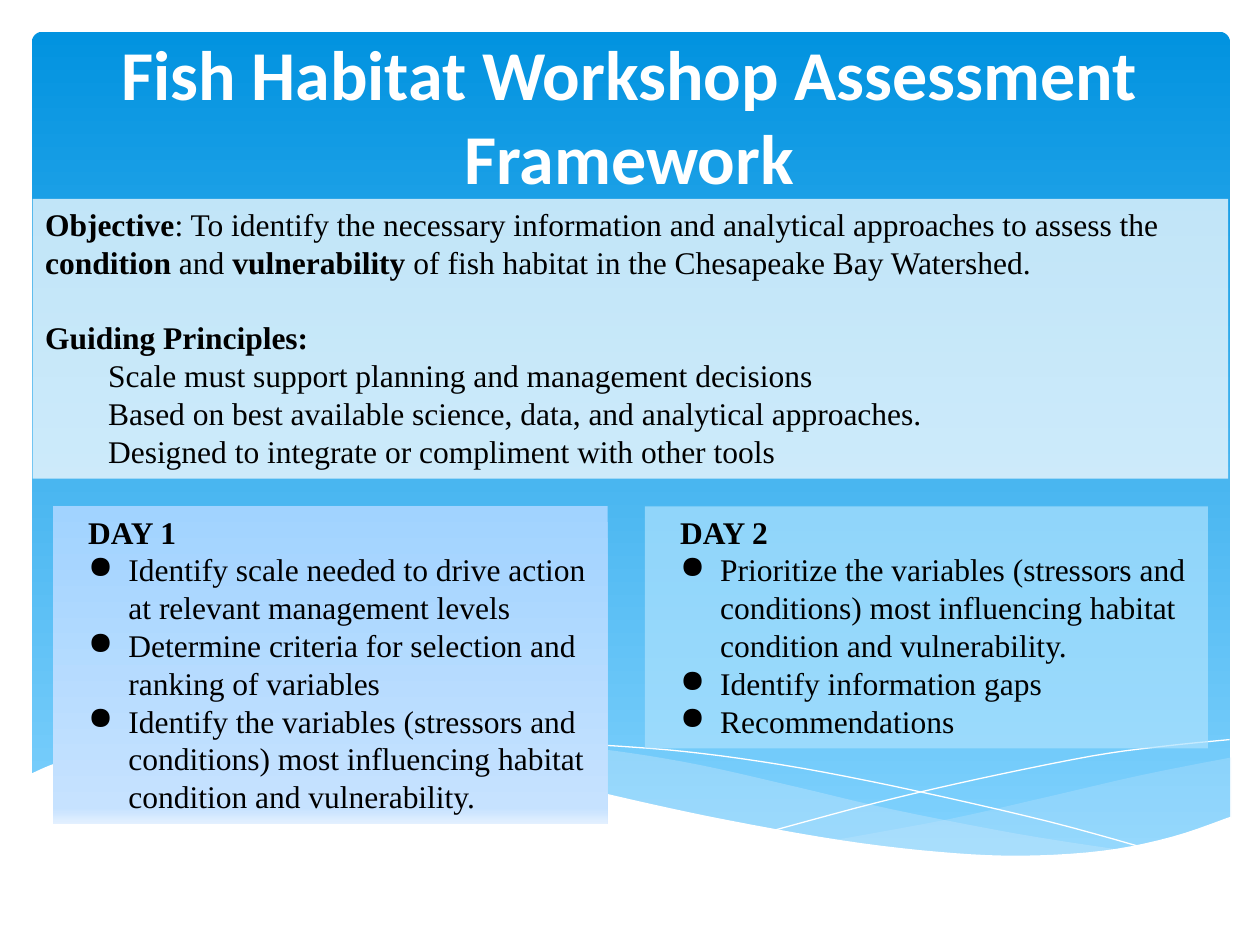
from copy import deepcopy

from lxml.etree import SubElement
from pptx import Presentation
from pptx.dml.color import RGBColor
from pptx.enum.shapes import MSO_SHAPE
from pptx.enum.text import MSO_ANCHOR, PP_ALIGN
from pptx.oxml.ns import qn
from pptx.util import Cm, Pt


def rgb(value):
    return RGBColor.from_string(value)


def smooth_curve(knots, steps=5):
    padded = [knots[0], *knots, knots[-1]]
    points = [knots[0]]
    for quad in zip(padded, padded[1:], padded[2:], padded[3:]):
        for step in range(1, steps + 1):
            t = step / steps
            points.append(tuple(
                b + t * (c - a) / 2
                + t ** 2 * (2 * a - 5 * b + 4 * c - d) / 2
                + t ** 3 * (3 * b - a - 3 * c + d) / 2
                for a, b, c, d in zip(*quad)
            ))
    return points


class SlidePainter:
    """Holds the text style and the current slide, and draws elements on it."""

    body_font = "Times New Roman"
    body_size = 18
    line_pitch = 21.6
    text_color = "000000"

    def __init__(self, slide):
        self.slide = slide

    def solid(self, shape, color, opacity=100):
        shape.fill.solid()
        shape.fill.fore_color.rgb = rgb(color)
        if opacity < 100:
            color_element = next(shape._element.spPr.iter(qn("a:srgbClr")))
            SubElement(color_element, qn("a:alpha"), val=str(opacity * 1000))

    def gradient(self, shape, stops):
        shape.fill.gradient()
        shape.fill.gradient_angle = 270
        stop_list = next(shape._element.spPr.iter(qn("a:gsLst")))
        for _ in range(len(stops) - len(stop_list)):
            stop_list.append(deepcopy(stop_list[-1]))
        for stop, (position, color) in zip(shape.fill.gradient_stops, stops):
            stop.position = position
            stop.color.rgb = rgb(color)

    def box(self, left, top, width, height, kind=MSO_SHAPE.RECTANGLE):
        shape = self.slide.shapes.add_shape(
            kind, Cm(left), Cm(top), Cm(width), Cm(height))
        shape.shadow.inherit = False
        shape.line.fill.background()
        return shape

    def outline(self, points, close):
        emu_points = [(Cm(x), Cm(y)) for x, y in points]
        builder = self.slide.shapes.build_freeform(*emu_points[0])
        builder.add_line_segments(emu_points[1:], close=close)
        shape = builder.convert_to_shape()
        shape.shadow.inherit = False
        return shape

    def wave(self, edges, color, opacity=100):
        points = [point for edge in edges for point in smooth_curve(edge)]
        shape = self.outline(points, True)
        self.solid(shape, color, opacity)
        shape.line.fill.background()

    def hairline(self, knots, color):
        shape = self.outline(smooth_curve(knots), False)
        shape.fill.background()
        shape.line.color.rgb = rgb(color)
        shape.line.width = Pt(0)

    def run(self, paragraph, text, bold, font, size, color):
        run = paragraph.add_run()
        run.text = text
        run.font.name = font
        run.font.size = Pt(size)
        run.font.bold = bold
        run.font.color.rgb = rgb(color)

    def title(self, text, left, top, width, height):
        shape = self.slide.shapes.add_textbox(
            Cm(left), Cm(top), Cm(width), Cm(height))
        frame = shape.text_frame
        frame.word_wrap = True
        frame.margin_top = frame.margin_bottom = Cm(0.25)
        paragraph = frame.paragraphs[0]
        paragraph.alignment = PP_ALIGN.CENTER
        self.run(paragraph, text, True, "Calibri", 40, "FFFFFF")

    def body(self, shape, paragraphs):
        frame = shape.text_frame
        frame.word_wrap = True
        frame.vertical_anchor = MSO_ANCHOR.TOP
        for index, (runs, margin, indent, space) in enumerate(paragraphs):
            paragraph = frame.add_paragraph() if index else frame.paragraphs[0]
            paragraph.alignment = PP_ALIGN.LEFT
            paragraph.line_spacing = Pt(self.line_pitch)
            paragraph.space_before = Pt(space)
            properties = paragraph._p.get_or_add_pPr()
            properties.set("marL", str(Cm(margin)))
            properties.set("indent", str(Cm(indent)))
            if indent:
                SubElement(properties, qn("a:buChar"), char="●")
            for text, bold in runs:
                self.run(paragraph, text, bold, self.body_font,
                         self.body_size, self.text_color)

    def day(self, shape, heading, items):
        bullets = [([(item, False)], 1.27, -0.81, 0) for item in items]
        self.body(shape, [([(heading, True)], 0.46, 0, 0), *bullets])


def draw_backdrop(painter):
    panel = painter.box(0.64, 0.64, 24.16, 16.76, MSO_SHAPE.ROUNDED_RECTANGLE)
    panel.adjustments[0] = 0.013
    painter.gradient(panel, [(0, "0293E0"), (1, "83D3FE")])
    painter.wave([
        [(24.82, 15.27), (23.04, 15.62), (21.18, 16.05), (19.15, 16.51),
         (16.81, 16.94)],
        [(16.81, 16.94), (18.62, 17.17), (20.42, 17.27), (22.17, 17.17),
         (23.6, 16.89), (24.82, 16.48)],
    ], "C6E7FC", 29)
    painter.wave([
        [(22.71, 17.15), (20.52, 16.81), (17.96, 16.31), (16, 15.85),
         (14.1, 15.42), (12.42, 15.14), (10.67, 14.96), (9.19, 14.91),
         (7.29, 15.06)],
        [(7.29, 15.06), (9.22, 15.34), (11.43, 15.85), (13.46, 16.31),
         (15.72, 16.76), (17.68, 17.07), (19.66, 17.25), (21.31, 17.27),
         (22.71, 17.15)],
    ], "C6E7FC", 40)
    painter.hairline(
        [(7.87, 15.16), (8.97, 15.01), (10.59, 14.96), (12.42, 15.04),
         (14.15, 15.19), (16.18, 15.49), (18.49, 15.95), (21.13, 16.56),
         (23.06, 17.09)], "FFFFFF")
    painter.hairline(
        [(15.6, 16.74), (17.68, 16.18), (19.74, 15.7), (22.02, 15.24),
         (23.5, 15.04), (24.79, 14.91)], "FFFFFF")
    painter.wave([
        [(24.82, 16.46), (23.62, 16.87), (22.23, 17.15), (20.55, 17.25),
         (18.9, 17.17), (16.97, 16.94), (14.71, 16.54), (12.78, 16.13),
         (10.62, 15.62), (8.64, 15.21), (6.88, 14.99), (4.9, 14.88),
         (3.35, 14.94), (2.16, 15.11), (1.17, 15.37), (0.58, 15.62)],
        [(0.58, 18.57), (24.82, 18.57)],
    ], "FFFFFF")


def draw_content(painter):
    painter.title("Fish Habitat Workshop Assessment Framework",
                  0.2, 0.36, 24.97, 2.13)

    day_one = painter.box(1.07, 10.21, 11.18, 6.4)
    painter.gradient(
        day_one, [(0, "A1D3FF"), (0.95, "C6E2FF"), (1, "E3F0FF")])
    painter.day(day_one, "DAY 1", [
        "Identify scale needed to drive action at relevant management levels",
        "Determine criteria for selection and ranking of variables",
        "Identify the variables (stressors and conditions) most influencing "
        "habitat condition and vulnerability.",
    ])

    objective = painter.box(0.66, 4.01, 24.1, 5.64)
    painter.solid(objective, "FFFFFF", 73)
    principles = [
        "Scale must support planning and management decisions",
        "Based on best available science, data, and analytical approaches.",
        "Designed to integrate or compliment with other tools",
    ]
    painter.body(objective, [
        ([("Objective", True),
          (": To identify the necessary information and analytical "
           "approaches to assess the ", False),
          ("condition", True), (" and ", False), ("vulnerability", True),
          (" of fish habitat in the Chesapeake Bay Watershed.", False)],
         0, 0, 0),
        ([("Guiding Principles:", True)], 0, 0, painter.line_pitch),
        *[([(text, False)], 1.27, 0, 0) for text in principles],
    ])

    day_two = painter.box(13, 10.21, 11.35, 4.88)
    painter.solid(day_two, "ADE2FE", 70)
    painter.day(day_two, "DAY 2", [
        "Prioritize the variables (stressors and conditions) most "
        "influencing habitat condition and vulnerability.",
        "Identify information gaps",
        "Recommendations",
    ])


def main():
    presentation = Presentation()
    presentation.slide_width, presentation.slide_height = Cm(25.4), Cm(19.05)
    slide = presentation.slides.add_slide(presentation.slide_layouts[6])
    painter = SlidePainter(slide)
    draw_backdrop(painter)
    draw_content(painter)
    presentation.save("out.pptx")


if __name__ == "__main__":
    main()
